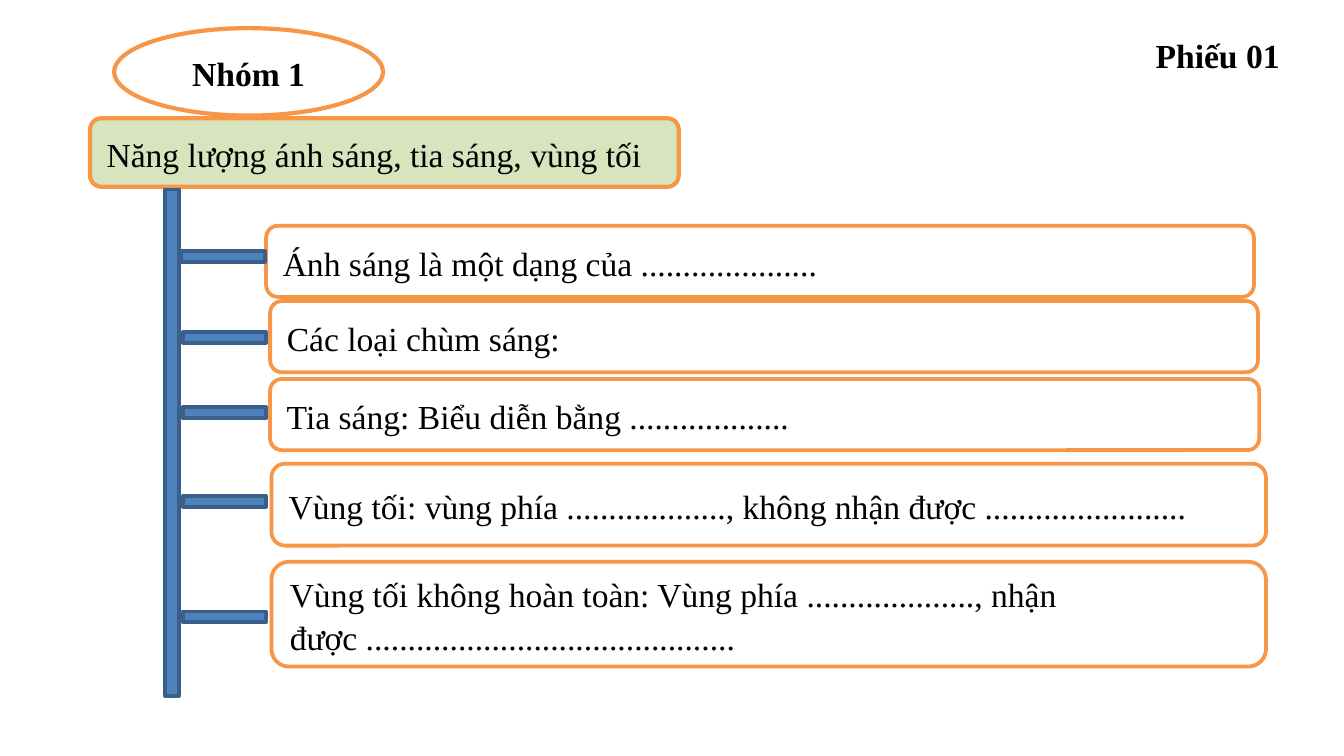
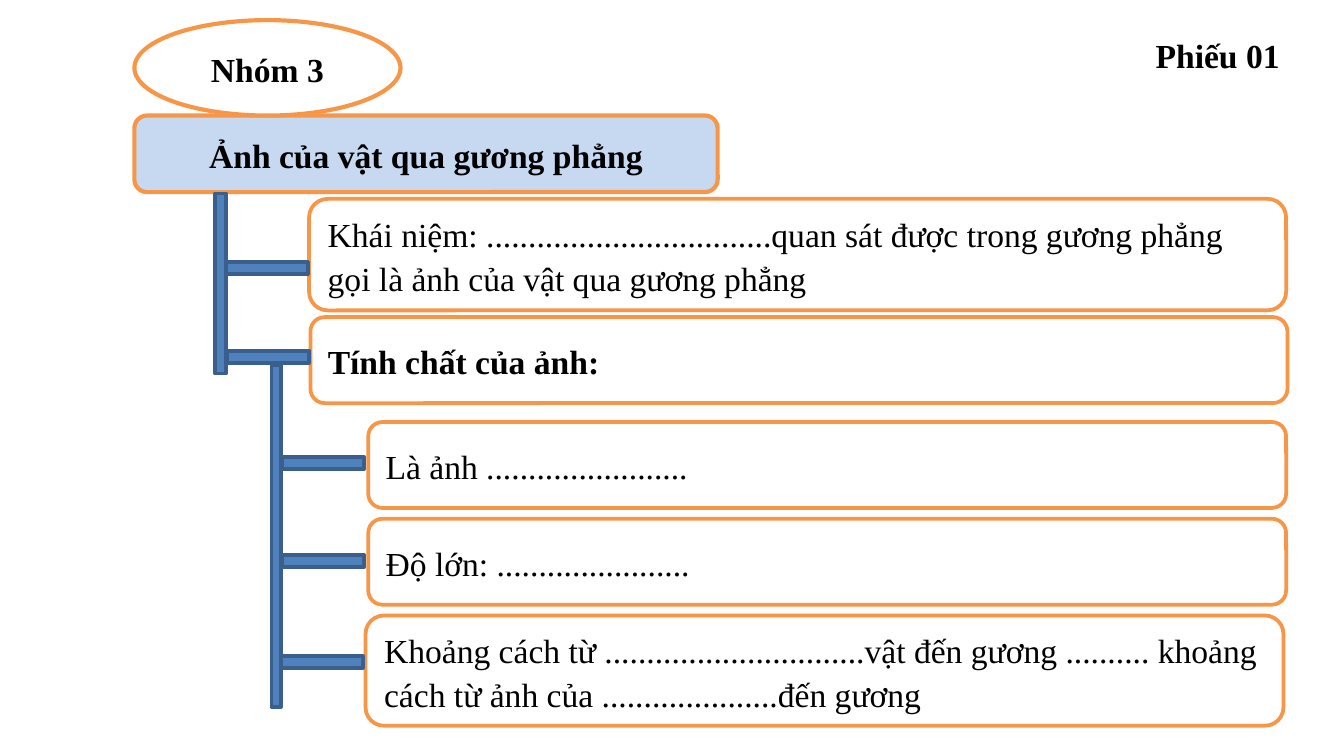
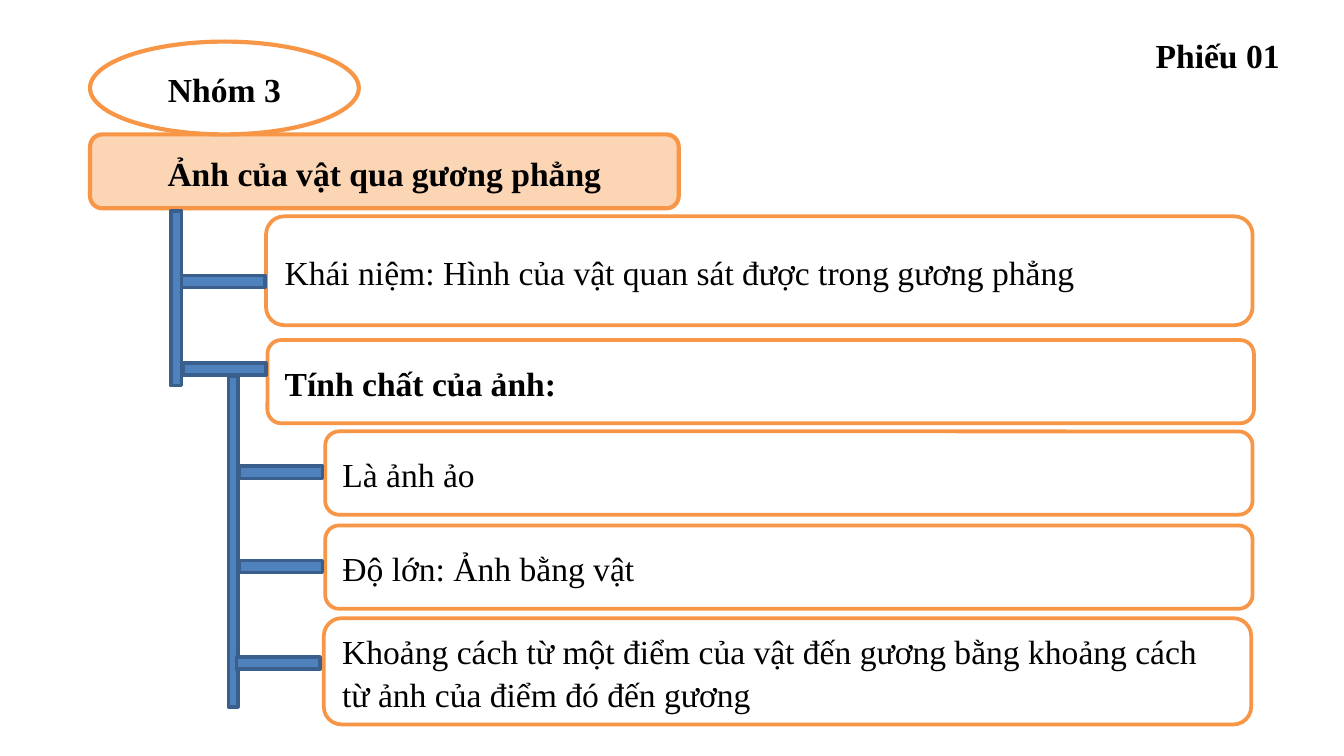
from dataclasses import dataclass
from typing import NamedTuple

from pptx import Presentation
from pptx import util as u
from pptx.dml.color import RGBColor
from pptx.enum import shapes, text

ORANGE = RGBColor(0xF7, 0x96, 0x46)
BLUE = RGBColor(0x4F, 0x81, 0xBD)
NAVY = RGBColor(0x3A, 0x5F, 0x8C)
GREEN = RGBColor(0xD7, 0xE4, 0xBD)
SKY = RGBColor(0xC6, 0xD9, 0xF1)
PEACH = RGBColor(0xFC, 0xD5, 0xB5)
WHITE = RGBColor(0xFF, 0xFF, 0xFF)
BLACK = RGBColor(0, 0, 0)

WIDTH = u.Inches(10)
HEIGHT = WIDTH * 9 // 16
SHAPE = shapes.MSO_SHAPE
LEFT, CENTER = text.PP_ALIGN.LEFT, text.PP_ALIGN.CENTER
FONT = {"name": "Times New Roman", "size": u.Pt(18)}
SPACING = {"line_spacing": 1.07, "space_after": u.Pt(8)}
FRAME = {"word_wrap": True, "vertical_anchor": text.MSO_ANCHOR.MIDDLE}
LABEL_FRAME = {"word_wrap": True, "auto_size": text.MSO_AUTO_SIZE.SHAPE_TO_FIT_TEXT}


class Box(NamedTuple):
    left: float
    top: float
    width: float
    height: float


class Stub(NamedTuple):
    left: float
    top: float


@dataclass
class Branch:
    words: str
    card: Box
    stub: Stub
    bold: bool = False


@dataclass
class Sheet:
    group: str
    oval: Box
    topic: str
    topic_box: Box
    topic_fill: RGBColor
    topic_bold: bool
    topic_align: text.PP_ALIGN
    spines: list[Box]
    stub_width: float
    stub_height: float
    branches: list[Branch]


SHEETS = [
    Sheet(
        "Nhóm 1", Box(0.85, 0.21, 2, 0.65),
        "Năng lượng ánh sáng, tia sáng, vùng tối", Box(0.67, 0.88, 4.38, 0.51),
        GREEN, False, LEFT,
        [Box(1.23, 1.41, 0.1, 3.77)], 0.62, 0.08,
        [
            Branch("Ánh sáng là một dạng của .....................",
                   Box(1.98, 1.68, 7.35, 0.53), Stub(1.35, 1.87)),
            Branch("Các loại chùm sáng:",
                   Box(2.01, 2.24, 7.35, 0.53), Stub(1.36, 2.47)),
            Branch("Tia sáng: Biểu diễn bằng ...................",
                   Box(2.01, 2.82, 7.36, 0.53), Stub(1.36, 3.03)),
            Branch("Vùng tối: vùng phía ..................., không nhận được ........................",
                   Box(2.02, 3.45, 7.4, 0.61), Stub(1.36, 3.69)),
            Branch("Vùng tối không hoàn toàn: Vùng phía ...................., nhận được "
                   "............................................",
                   Box(2.02, 4.18, 7.4, 0.78), Stub(1.36, 4.55)),
        ],
    ),
    Sheet(
        "Nhóm 3", Box(1, 0.15, 1.98, 0.71),
        "Ảnh của vật qua gương phẳng", Box(1, 0.86, 4.34, 0.57),
        SKY, True, CENTER,
        [Box(1.6, 1.44, 0.08, 1.34), Box(2.02, 2.72, 0.07, 2.54)], 0.61, 0.09,
        [
            Branch("Khái niệm: ..................................quan sát được trong gương phẳng "
                   "gọi là ảnh của vật qua gương phẳng",
                   Box(2.3, 1.48, 7.27, 0.83), Stub(1.68, 1.95)),
            Branch("Tính chất của ảnh:",
                   Box(2.31, 2.36, 7.27, 0.64), Stub(1.69, 2.61), True),
            Branch("Là ảnh ........................",
                   Box(2.74, 3.14, 6.83, 0.64), Stub(2.1, 3.4)),
            Branch("Độ lớn: .......................",
                   Box(2.74, 3.86, 6.83, 0.64), Stub(2.1, 4.13)),
            Branch("Khoảng cách từ ...............................vật đến gương .......... "
                   "khoảng cách từ ảnh của .....................đến gương",
                   Box(2.72, 4.58, 6.83, 0.82), Stub(2.09, 4.88)),
        ],
    ),
    Sheet(
        "Nhóm 3", Box(0.67, 0.31, 2, 0.69),
        "Ảnh của vật qua gương phẳng", Box(0.67, 1, 4.38, 0.55),
        PEACH, True, CENTER,
        [Box(1.27, 1.57, 0.08, 1.3), Box(1.7, 2.8, 0.07, 2.46)], 0.62, 0.09,
        [
            Branch("Khái niệm: Hình của vật quan sát được trong gương phẳng",
                   Box(1.98, 1.61, 7.34, 0.81), Stub(1.35, 2.05)),
            Branch("Tính chất của ảnh:",
                   Box(1.99, 2.53, 7.34, 0.62), Stub(1.36, 2.7), True),
            Branch("Là ảnh ảo",
                   Box(2.42, 3.21, 6.9, 0.62), Stub(1.78, 3.47)),
            Branch("Độ lớn: Ảnh bằng vật",
                   Box(2.42, 3.91, 6.9, 0.62), Stub(1.78, 4.17)),
            Branch("Khoảng cách từ một điểm của vật đến gương bằng khoảng cách "
                   "từ ảnh của điểm đó đến gương",
                   Box(2.41, 4.6, 6.9, 0.79), Stub(1.76, 4.89)),
        ],
    ),
]


def apply(target: object, values: dict) -> None:
    for name, value in values.items():
        setattr(target, name, value)


def write(sp, words: str, bold: bool, frame: dict, paragraph: dict) -> None:
    tf = sp.text_frame
    apply(tf, frame)
    p = tf.paragraphs[0]
    apply(p, paragraph)
    r = p.add_run()
    r.text = words
    apply(r.font, FONT | {"bold": bold})
    r.font.color.rgb = BLACK


def add_block(s, kind: SHAPE, box: Box, fill: RGBColor, line: RGBColor, weight: float = 2):
    sp = s.shapes.add_shape(kind, *map(u.Inches, box))
    sp.shadow.inherit = False
    sp.fill.solid()
    sp.fill.fore_color.rgb = fill
    sp.line.color.rgb = line
    sp.line.width = u.Pt(weight)
    return sp


def add_card(s, kind: SHAPE, box: Box, words: str, fill: RGBColor = WHITE, weight: float = 2,
             bold: bool = False, align: text.PP_ALIGN = LEFT) -> None:
    sp = add_block(s, kind, box, fill, ORANGE, weight)
    write(sp, words, bold, FRAME, SPACING | {"alignment": align})


def add_bar(s, box: Box) -> None:
    add_block(s, SHAPE.RECTANGLE, box, BLUE, NAVY)


def add_label(s) -> None:
    sp = s.shapes.add_textbox(*map(u.Inches, Box(8.5, 0.21, 1.25, 0.4)))
    write(sp, "Phiếu 01", True, LABEL_FRAME, {"alignment": LEFT})


def draw_sheet(s, sheet: Sheet) -> None:
    add_card(s, SHAPE.ROUNDED_RECTANGLE, sheet.topic_box, sheet.topic, sheet.topic_fill,
             2.25, sheet.topic_bold, sheet.topic_align)
    for spine in sheet.spines:
        add_bar(s, spine)
    for branch in sheet.branches:
        add_card(s, SHAPE.ROUNDED_RECTANGLE, branch.card, branch.words, bold=branch.bold)
    for branch in sheet.branches:
        add_bar(s, Box(*branch.stub, sheet.stub_width, sheet.stub_height))
    add_card(s, SHAPE.OVAL, sheet.oval, sheet.group, WHITE, 2.25, True, CENTER)
    add_label(s)


def main() -> None:
    prs = Presentation()
    apply(prs, {"slide_width": WIDTH, "slide_height": HEIGHT})
    for sheet in SHEETS:
        draw_sheet(prs.slides.add_slide(prs.slide_layouts[6]), sheet)
    prs.save("out.pptx")


if __name__ == "__main__":
    main()
